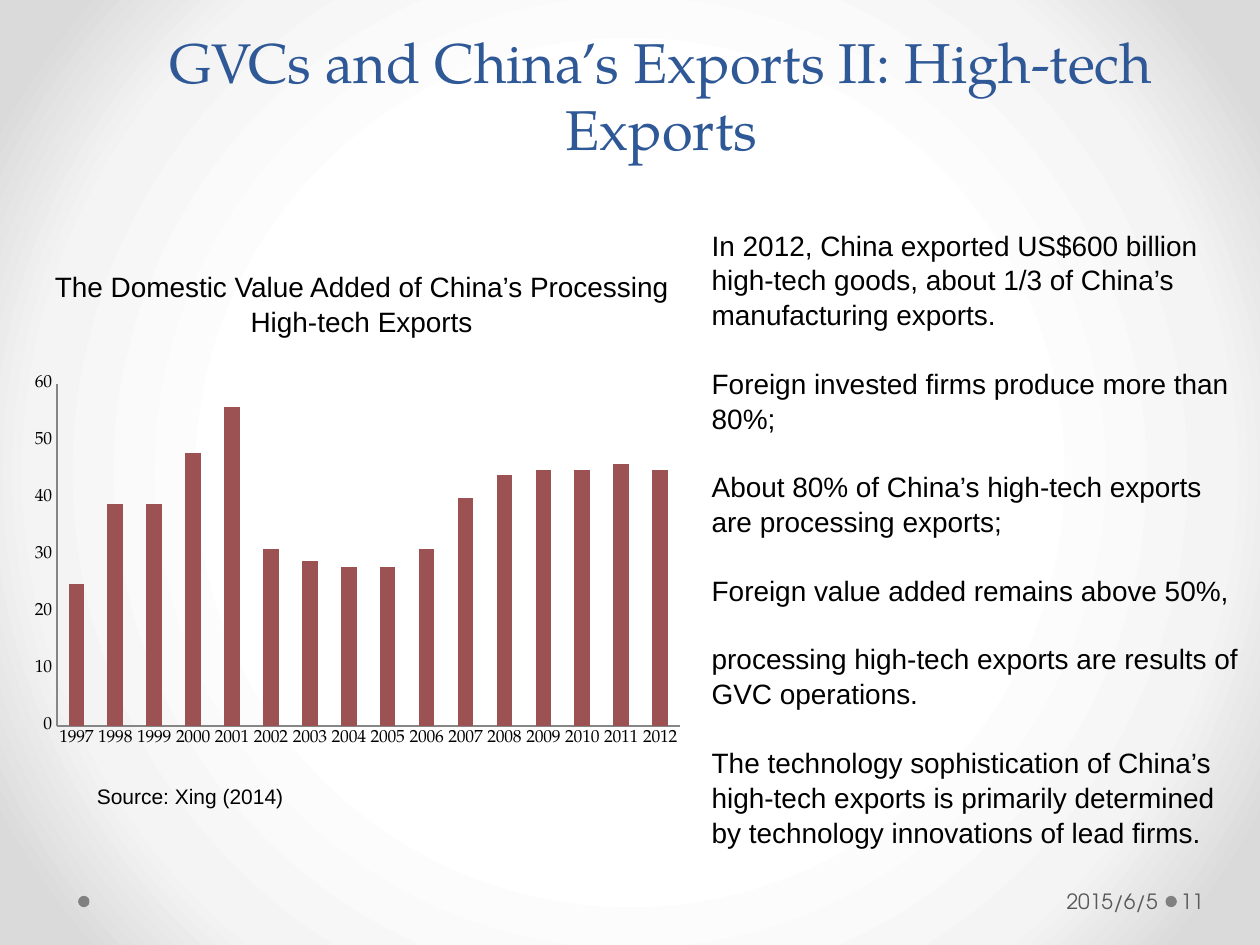
from dataclasses import dataclass

from lxml.etree import SubElement
from pptx import Presentation
from pptx.chart.data import CategoryChartData
from pptx.dml.color import RGBColor
from pptx.enum.chart import XL_CHART_TYPE, XL_TICK_MARK
from pptx.enum.shapes import MSO_SHAPE
from pptx.enum.text import MSO_ANCHOR, PP_ALIGN
from pptx.oxml.ns import qn
from pptx.util import Inches, Pt


@dataclass(frozen=True)
class Theme:
    blue: str = "2F5897"
    black: str = "000000"
    gray: str = "595959"
    dot: str = "808080"
    axis: str = "868686"
    bar: str = "9C5252"
    glow: tuple = ((50, "FFFFFF"), (76, "F4F4F4"), (92, "DADADA"))
    serif: str = "TeX Gyre Pagella"
    sans: str = "Arial"
    foot: str = "TeX Gyre Adventor"
    title: int = 32
    body: int = 16
    small: int = 12
    tick: int = 10
    lead: float = 1.04
    gap: float = 19.2


def rgb(code):
    return RGBColor.from_string(code)


def place(*box):
    return [Inches(n) for n in box]


class Deck:
    def __init__(self, theme):
        self.theme = theme
        self.file = Presentation()
        self.file.slide_width, self.file.slide_height = place(10, 7.5)
        self.slide = self.file.slides.add_slide(self.file.slide_layouts[6])

    def glow(self):
        """Fill the background with a round gradient."""
        self.slide.background.fill.gradient()
        grad = next(self.slide.element.iter(qn("a:gradFill")))
        for part in list(grad):
            grad.remove(part)
        stops = SubElement(grad, qn("a:gsLst"))
        for pos, code in self.theme.glow:
            stop = SubElement(stops, qn("a:gs"), pos=str(pos * 1000))
            SubElement(stop, qn("a:srgbClr"), val=code)
        ring = SubElement(grad, qn("a:path"), path="circle")
        sides = dict.fromkeys("ltrb", "50000")
        SubElement(ring, qn("a:fillToRect"), **sides)

    def dot(self, left, top, size=0.09):
        dot = self.slide.shapes.add_shape(
            MSO_SHAPE.OVAL, *place(left, top, size, size))
        dot.shadow.inherit = False
        dot.fill.solid()
        dot.fill.fore_color.rgb = rgb(self.theme.dot)
        dot.line.fill.background()

    def text(self, box, lines, size, face, color, align=PP_ALIGN.LEFT,
             lead=None, gap=0):
        frame = self.slide.shapes.add_textbox(*place(*box)).text_frame
        frame.word_wrap = True
        frame.text = "\n".join(lines)
        for i, para in enumerate(frame.paragraphs):
            para.alignment = align
            if lead:
                para.line_spacing = lead
            if i and gap:
                para.space_before = Pt(gap)
            para.font.size = Pt(size)
            para.font.name = face
            para.font.color.rgb = rgb(color)
        return frame

    def footer(self, box, words, align, left, right=0.05):
        look = self.theme
        frame = self.text(box, [words], look.small, look.foot, look.gray, align)
        frame.vertical_anchor = MSO_ANCHOR.MIDDLE
        frame.margin_left, frame.margin_right = place(left, right)

    def chart(self, box, cats, vals):
        look = self.theme
        data = CategoryChartData()
        data.categories = cats
        data.add_series("Series 1", vals)
        chart = self.slide.shapes.add_chart(
            XL_CHART_TYPE.COLUMN_CLUSTERED, *place(*box), data).chart
        chart.has_legend = chart.has_title = False
        chart.font.size = Pt(look.tick)
        chart.font.name = look.serif
        chart.font.color.rgb = rgb(look.black)

        # Columns
        plot = chart.plots[0]
        plot.gap_width = 150
        plot.vary_by_categories = False
        fill = plot.series[0].format.fill
        fill.solid()
        fill.fore_color.rgb = rgb(look.bar)

        # Axes
        scale = chart.value_axis
        scale.has_major_gridlines = False
        scale.minimum_scale, scale.maximum_scale = 0, 60
        scale.major_unit = 10
        scale.tick_labels.number_format = "0"
        scale.tick_labels.number_format_is_linked = False
        for axis in (scale, chart.category_axis):
            axis.major_tick_mark = axis.minor_tick_mark = XL_TICK_MARK.NONE
            axis.format.line.color.rgb = rgb(look.axis)
            axis.format.line.width = Pt(0.75)


YEARS = [str(year) for year in range(1997, 2013)]
SHARES = [25, 39, 39, 48, 56, 31, 29, 28, 28, 31, 40, 44, 45, 45, 46, 45]
POINTS = [
    "In 2012, China exported US$600 billion high-tech goods, "
    "about 1/3 of China’s manufacturing exports.",
    "Foreign invested firms produce more than 80%;",
    "About 80% of China’s high-tech exports are processing exports;",
    "Foreign value added remains above 50%,",
    "processing high-tech exports are results of GVC operations.",
    "The technology sophistication of China’s high-tech exports is "
    "primarily determined by technology innovations of lead firms.",
]


def main():
    look = Theme()
    deck = Deck(look)
    deck.glow()

    # Footer
    for left in (9.25, 0.62):
        deck.dot(left, 7.11)
    deck.footer((6.96, 6.95, 2.28, 0.4), "2015/6/5", PP_ALIGN.RIGHT, 0.1)
    deck.footer((9.34, 6.95, 0.61, 0.4), "11", PP_ALIGN.LEFT, 0.03)

    # Chart with its heading and source
    deck.chart((0.17, 2.92, 5.33, 3.08), YEARS, SHARES)
    deck.text((0.33, 2.08, 5.08, 0.64),
              ["The Domestic Value Added of China’s Processing High-tech Exports"],
              look.body, look.sans, look.black, PP_ALIGN.CENTER, look.lead)
    deck.text((0.67, 6.17, 3.33, 0.3), ["Source: Xing (2014)"],
              look.small, look.sans, look.black)

    # Findings
    deck.text((5.55, 1.75, 4.42, 4.95), POINTS, look.body, look.sans,
              look.black, lead=look.lead, gap=look.gap)

    # Title
    deck.text((1, 0.17, 8.5, 1.18),
              ["GVCs and China’s Exports II: High-tech Exports"],
              look.title, look.serif, look.blue, PP_ALIGN.CENTER)

    deck.file.save("out.pptx")


if __name__ == "__main__":
    main()
